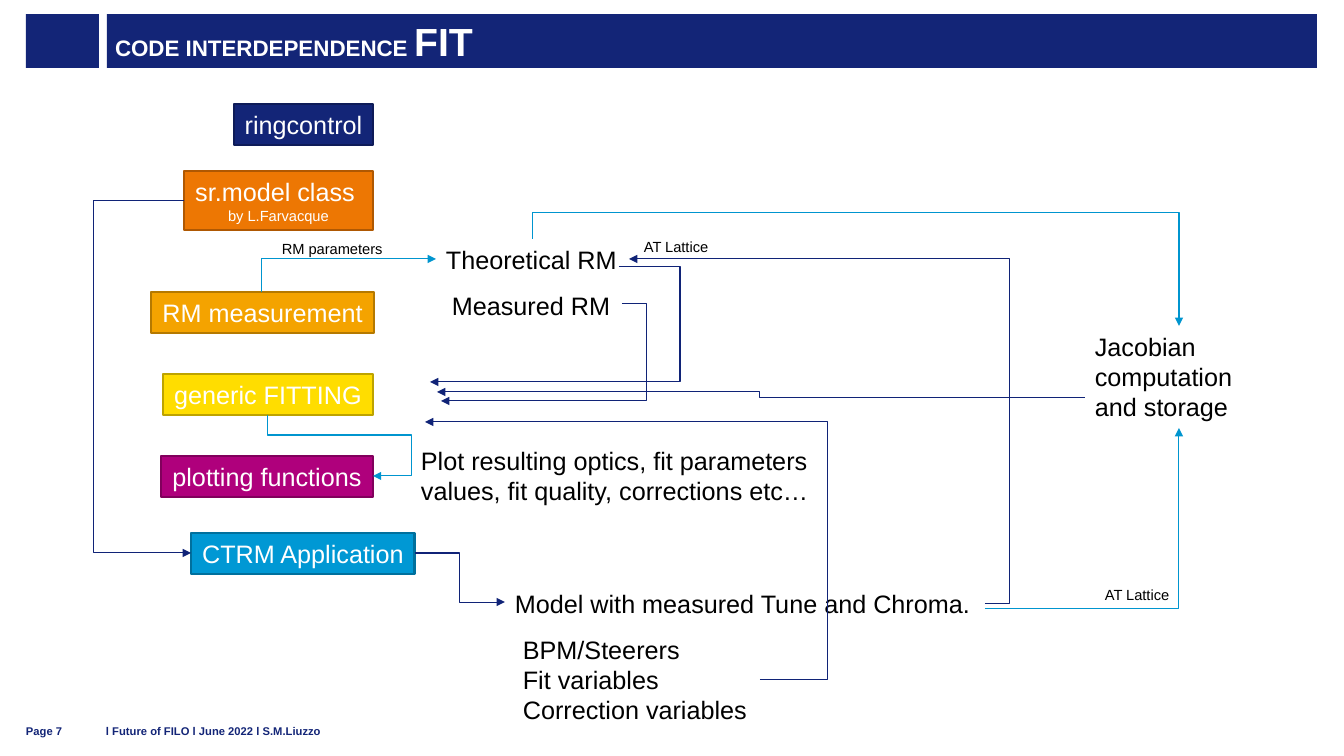
from pptx import Presentation
from pptx.dml.color import RGBColor
from pptx.enum.shapes import MSO_CONNECTOR, MSO_SHAPE
from pptx.enum.text import MSO_ANCHOR, MSO_AUTO_SIZE, PP_ALIGN
from pptx.oxml.ns import qn
from pptx.util import Pt
from lxml.etree import SubElement

PX = 914400 / 100.8
NAVY = RGBColor(0x13, 0x25, 0x77)
NAVY_LINE = RGBColor(0x10, 0x23, 0x77)
BLUE_LINE = RGBColor(0x00, 0x95, 0xCF)
WHITE = RGBColor(0xFF, 0xFF, 0xFF)
BLACK = RGBColor(0x00, 0x00, 0x00)
NAVY_EDGE = RGBColor(0x0E, 0x1B, 0x58)
ORANGE, ORANGE_EDGE = RGBColor(0xED, 0x77, 0x03), RGBColor(0xAF, 0x58, 0x02)
AMBER, AMBER_EDGE = RGBColor(0xF4, 0xA3, 0x00), RGBColor(0xB5, 0x79, 0x00)
YELLOW, YELLOW_EDGE = RGBColor(0xFF, 0xDD, 0x00), RGBColor(0xBD, 0xA3, 0x00)
PURPLE, PURPLE_EDGE = RGBColor(0xAF, 0x00, 0x7C), RGBColor(0x81, 0x00, 0x5C)
CYAN, CYAN_EDGE = RGBColor(0x00, 0x98, 0xD4), RGBColor(0x00, 0x70, 0x9D)

TITLE = [("CODE INTERDEPENDENCE ", 16), ("FIT", 28)]
FOOTERS = [
    ("Page 7", (26, 715, 60, 23)),
    ("l Future of FILO l June 2022 l S.M.Liuzzo", (106, 715, 899, 23)),
]
MODULES = [
    ([("ringcontrol", 18)], (234, 104, 139, 41), NAVY, NAVY_EDGE),
    ([("sr.model class ", 18), ("by L.Farvacque", 10.5)], (184, 171, 189, 59), ORANGE, ORANGE_EDGE),
    ([("RM measurement", 18)], (151, 292, 223, 41), AMBER, AMBER_EDGE),
    ([("generic FITTING", 18)], (163, 374, 210, 41), YELLOW, YELLOW_EDGE),
    ([("plotting functions", 18)], (161, 456, 212, 41), PURPLE, PURPLE_EDGE),
    ([("CTRM Application", 18)], (191, 533, 224, 41), CYAN, CYAN_EDGE),
]
DATA_LABELS = [
    (["Theoretical RM"], (436, 239, 193, 41), 18, False),
    (["Measured RM"], (442, 285, 181, 41), 18, False),
    (["Jacobian computation and storage"], (1085, 326, 188, 102), 18, True),
    (["Plot resulting optics, fit parameters values, fit quality, corrections etc…"],
     (411, 440, 430, 71), 18, True),
    (["Model with measured Tune and Chroma."], (505, 583, 480, 41), 18, False),
    (["BPM/Steerers", "Fit variables", "Correction variables"], (513, 629, 247, 102), 18, False),
    (["RM parameters"], (272, 235, 127, 29), 10.5, False),
    (["AT Lattice"], (634, 233, 87, 28), 10.5, False),
    (["AT Lattice"], (1095, 581, 87, 28), 10.5, False),
]
SIDE_BENDS = [
    ((985, 604), (629, 259), 1010),
    ((415, 553), (505, 602), 460),
    ((184, 201), (191, 553), 93),
    ((760, 680), (425, 422), 828),
    ((622, 304), (441, 401), 647),
    ((619, 267), (430, 382), 680),
    ((1085, 398), (437, 392), 760),
]
MODEL_TO_JACOBIAN = ((985, 609), (1179, 428))
MEASUREMENT_TO_THEORY = ((262, 292), (436, 259))
FITTING_TO_PLOTTING = ((268, 415), (373, 476), 412, 435)
THEORY_TO_JACOBIAN = ((532, 239), (1179, 326), 213)


def emu(*lengths):
    return [round(length * PX) for length in lengths]


def style(font, size, color, bold=False):
    font.name, font.size, font.bold = "Arial", Pt(size), bold
    font.color.rgb = color


def add_box(place, fill, edge=None):
    box = slide.shapes.add_shape(MSO_SHAPE.RECTANGLE, *emu(*place))
    box.shadow.inherit = False
    box.fill.solid()
    box.fill.fore_color.rgb = fill
    if edge is None:
        box.line.fill.background()
    else:
        box.line.color.rgb = edge
        box.line.width = Pt(2)
    return box


def add_label(lines, place, size, color, wrap, bold=False):
    frame = slide.shapes.add_textbox(*emu(*place)).text_frame
    frame.word_wrap = wrap
    frame.text = "\n".join(lines)
    for paragraph in frame.paragraphs:
        style(paragraph.font, size, color, bold)
    return frame


def add_elbow(start, end, color, bends, preset, arrow="tailEnd", turn=0):
    elbow = slide.shapes.add_connector(MSO_CONNECTOR.ELBOW, *emu(*start, *end))
    elbow.line.color.rgb = color
    elbow.line.width = Pt(0.75)
    properties = elbow._element.spPr
    SubElement(properties.find(qn("a:ln")), qn("a:" + arrow), type="triangle")
    SubElement(properties, qn("a:effectLst"))
    if turn:
        properties.find(qn("a:xfrm")).set("rot", str(turn * 60000))
    geometry = properties.find(qn("a:prstGeom"))
    geometry.set("prst", preset)
    guides = geometry.find(qn("a:avLst"))
    for number, bend in enumerate(bends, 1):
        SubElement(guides, qn("a:gd"), name=f"adj{number}", fmla=f"val {round(bend * 100000)}")


def share(value, first, last):
    return (value - first) / (last - first)


presentation = Presentation()
presentation.slide_width, presentation.slide_height = emu(1344, 756)
slide = presentation.slides.add_slide(presentation.slide_layouts[5])

add_box((26, 14, 73, 54), NAVY)
title = slide.shapes.title
title.left, title.top, title.width, title.height = emu(107, 14, 1210, 54)
title.fill.solid()
title.fill.fore_color.rgb = NAVY
heading = title.text_frame
heading.auto_size = MSO_AUTO_SIZE.NONE
heading.vertical_anchor = MSO_ANCHOR.MIDDLE
heading.margin_left, heading.margin_right = emu(8, 8)
heading.margin_top = heading.margin_bottom = 0
heading.paragraphs[0].alignment = PP_ALIGN.LEFT
for words, size in TITLE:
    run = heading.paragraphs[0].add_run()
    run.text = words
    style(run.font, size, WHITE, True)

for words, place in FOOTERS:
    footer = add_label([words], place, 8, NAVY, True, True)
    footer.vertical_anchor = MSO_ANCHOR.BOTTOM
    footer.margin_left = footer.margin_right = footer.margin_top = footer.margin_bottom = 0

for lines, place, fill, edge in MODULES:
    module = add_box(place, fill, edge).text_frame
    module.word_wrap = False
    module.auto_size = MSO_AUTO_SIZE.SHAPE_TO_FIT_TEXT
    module.text = "\n".join(words for words, size in lines)
    for paragraph, (words, size) in zip(module.paragraphs, lines):
        paragraph.alignment = PP_ALIGN.CENTER
        style(paragraph.font, size, WHITE)

for lines, place, size, wrap in DATA_LABELS:
    label = add_label(lines, place, size, BLACK, wrap)
    label.auto_size = MSO_AUTO_SIZE.SHAPE_TO_FIT_TEXT

for start, end, bend_x in SIDE_BENDS:
    add_elbow(start, end, NAVY_LINE, [share(bend_x, start[0], end[0])], "bentConnector3")

add_elbow(*MODEL_TO_JACOBIAN, BLUE_LINE, [], "bentConnector2")
source, target = MEASUREMENT_TO_THEORY
add_elbow(target, source, BLUE_LINE, [], "bentConnector2", "headEnd")

source, target, bend_x, bend_y = FITTING_TO_PLOTTING
bends = [share(bend_x, target[0], source[0]), share(bend_y, target[1], source[1])]
add_elbow(target, source, BLUE_LINE, bends, "bentConnector4", "headEnd")

(left, top), (right, bottom), bend_y = THEORY_TO_JACOBIAN
center_x, center_y = (left + right) / 2, (top + bottom) / 2
half_width, half_height = (right - left) / 2, (bottom - top) / 2
add_elbow((center_x + half_height, center_y - half_width),
          (center_x - half_height, center_y + half_width),
          BLUE_LINE, [share(bend_y, top, bottom)], "bentConnector3", turn=270)

presentation.save("out.pptx")
